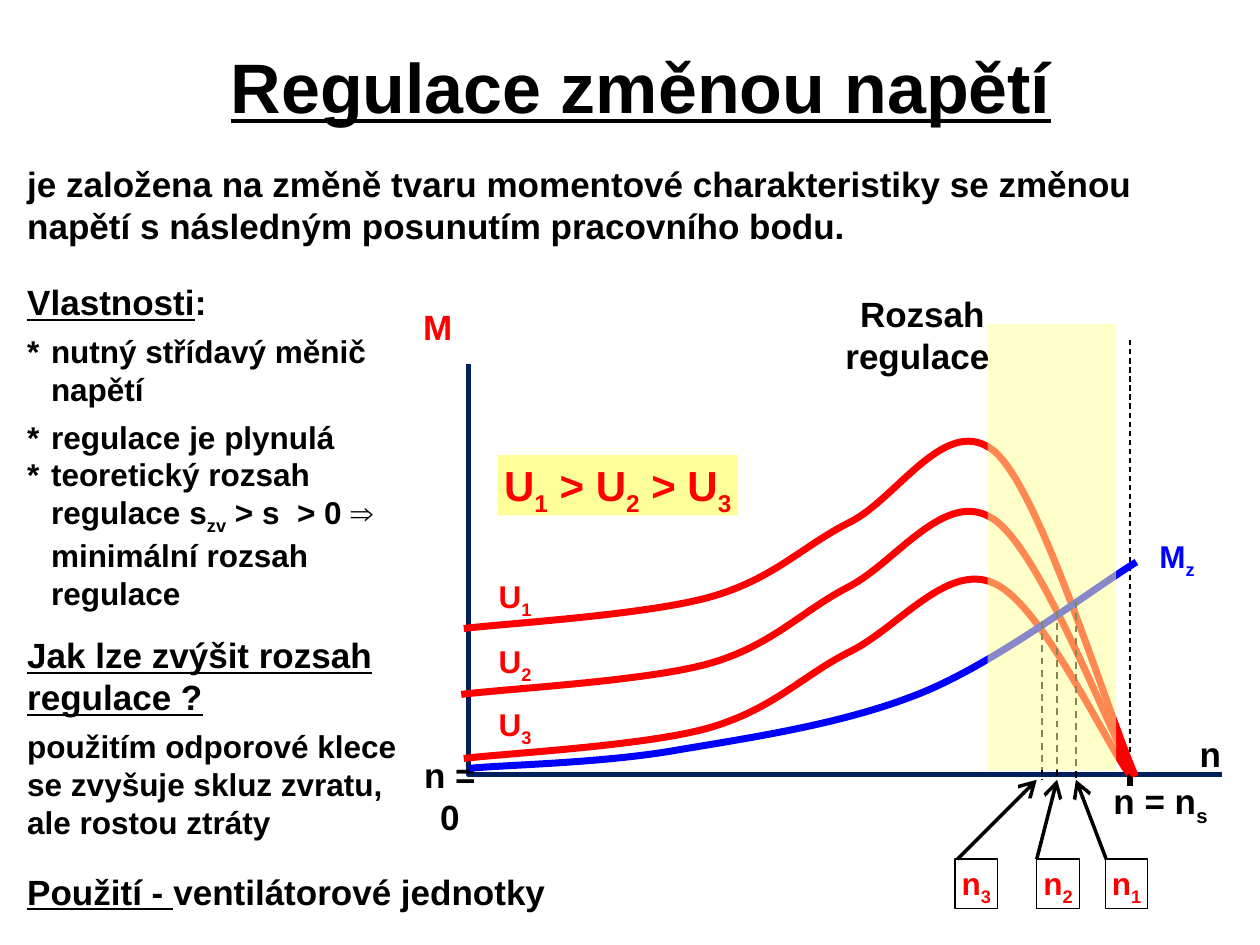
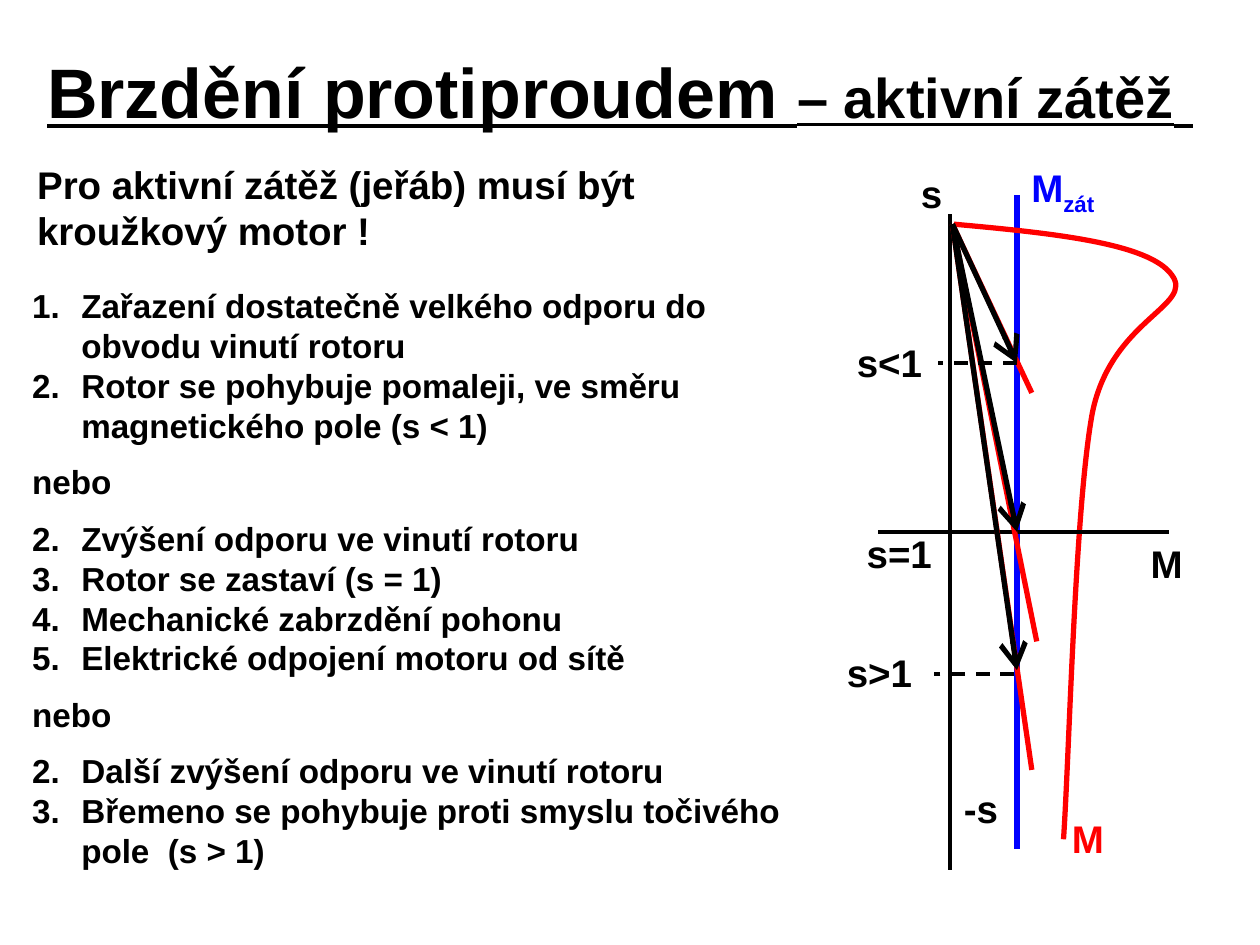
from lxml import etree
from pptx import Presentation
from pptx.dml.color import RGBColor
from pptx.enum.dml import MSO_LINE
from pptx.enum.shapes import MSO_CONNECTOR, MSO_SHAPE
from pptx.enum.text import MSO_ANCHOR, PP_ALIGN
from pptx.oxml.ns import qn
from pptx.util import Cm, Pt

BLACK = RGBColor(0, 0, 0)
WHITE = RGBColor(255, 255, 255)
RED = RGBColor(255, 0, 0)
BLUE = RGBColor(0, 0, 255)
NAVY = RGBColor(0, 0x20, 0x60)
YELLOW = RGBColor(255, 255, 0x99)

FONT = "Arial"
TITLE_SIZE = 40
LEFT, CENTER = PP_ALIGN.LEFT, PP_ALIGN.CENTER
TOP, MIDDLE, BOTTOM = MSO_ANCHOR.TOP, MSO_ANCHOR.MIDDLE, MSO_ANCHOR.BOTTOM
STRAIGHT = MSO_CONNECTOR.STRAIGHT
RECTANGLE = MSO_SHAPE.RECTANGLE
DASH = MSO_LINE.DASH


def add_run(p, text, size, color, underline=False, subscript=False):
    r = p.add_run()
    r.text = text
    font = r.font
    font.name, font.size, font.bold = FONT, Pt(size), True
    font.color.rgb = color
    if underline:
        font.underline = True
    if subscript:
        r._r.get_or_add_rPr().set("baseline", "-25000")


def add_runs(p, text, size, color):
    """Add text in which every second part between bars is a subscript."""
    for i, part in enumerate(text.split("|")):
        if part:
            add_run(p, part, size, color, subscript=i % 2 == 1)


def add_frame(slide, box, anchor=TOP, wrap=True, fill=None):
    sp = slide.shapes.add_textbox(*map(Cm, box))
    tf = sp.text_frame
    tf.word_wrap = wrap
    tf.vertical_anchor = anchor
    if fill is not None:
        sp.fill.solid()
        sp.fill.fore_color.rgb = fill
    return sp


def add_title(slide, box, *runs):
    p = add_frame(slide, box, MIDDLE).text_frame.paragraphs[0]
    p.alignment = CENTER
    for text, size in runs:
        add_run(p, text, size, BLACK, underline=True)


def add_label(slide, box, text, size, color=BLACK, anchor=MIDDLE, wrap=False, fill=None):
    """Add a centred label with narrow margins."""
    sp = add_frame(slide, box, anchor, wrap, fill)
    tf = sp.text_frame
    tf.margin_left = tf.margin_right = tf.margin_top = tf.margin_bottom = Cm(0.1)
    p = tf.paragraphs[0]
    p.alignment = CENTER
    add_runs(p, text, size, color)
    return sp


def add_block(slide, box, paragraphs, indent=0, fill=None, align=LEFT):
    """Add paragraphs given as (underlined lead, text, size, space before in percent)."""
    tf = add_frame(slide, box, fill=fill).text_frame
    for i, (lead, text, size, space) in enumerate(paragraphs):
        p = tf.paragraphs[0] if i == 0 else tf.add_paragraph()
        p.alignment = align
        p.space_before = Pt(size * space / 100)
        if indent:
            pPr = p._p.get_or_add_pPr()
            pPr.set("marL", str(Cm(indent)))
            pPr.set("indent", str(-Cm(indent)))
        if lead:
            add_run(p, lead, size, BLACK, underline=True)
        add_runs(p, text, size, BLACK)


def add_line(slide, start, end, color=BLACK, width=2.0, dashed=False, arrow=False):
    cn = slide.shapes.add_connector(STRAIGHT, *map(Cm, start + end))
    etree.SubElement(cn._element.spPr, qn("a:effectLst"))
    cn.line.color.rgb = color
    cn.line.width = Pt(width)
    if dashed:
        cn.line.dash_style = DASH
    if arrow:
        etree.SubElement(cn.line._get_or_add_ln(), qn("a:tailEnd"),
                         type="arrow", w="lg", len="lg")


def add_polyline(slide, points, color, width):
    points = [(Cm(x), Cm(y)) for x, y in points]
    builder = slide.shapes.build_freeform(*points[0])
    builder.add_line_segments(points[1:], close=False)
    sp = builder.convert_to_shape()
    sp.shadow.inherit = False
    sp.fill.background()
    sp.line.color.rgb = color
    sp.line.width = Pt(width)
    return sp


def add_curve(slide, knots, color, width):
    """Draw cubic segments; knots are a start, then two handles and an end for each."""
    sp = add_polyline(slide, knots, color, width)
    lines = list(sp._element.iter(qn("a:lnTo")))
    outline = lines[0].getparent()
    for i in range(0, len(lines), 3):
        cubic = etree.SubElement(outline, qn("a:cubicBezTo"))
        for line in lines[i:i + 3]:
            cubic.append(line[0])
            outline.remove(line)


def add_regulation_band(slide, box):
    sp = slide.shapes.add_shape(RECTANGLE, *map(Cm, box))
    sp.shadow.inherit = False
    sp.line.fill.background()
    sp.fill.solid()
    sp.fill.fore_color.rgb = YELLOW
    color = sp._element.spPr.find(qn("a:solidFill"))[0]
    etree.SubElement(color, qn("a:alpha"), val="53000")


def draw_voltage_chart(slide):
    axis_x, axis_y, sync_x = 9.45, 15.62, 22.78
    add_polyline(slide, [(axis_x, 7.34), (axis_x, axis_y), (24.64, axis_y)], NAVY, 3)
    add_line(slide, (sync_x, 15.39), (sync_x, 15.85), width=3)
    add_label(slide, (24.08, 14.66, 0.64, 1.04), "n", 20)
    add_label(slide, (22.33, 15.67, 2.13, 1.07), "n = n|s|", 20)
    add_label(slide, (8.27, 15.52, 1.6, 1.04), "n = 0", 20, wrap=True)
    add_line(slide, (sync_x, 6.86), (sync_x, axis_y), width=0.75, dashed=True)
    add_label(slide, (8.43, 6.07, 0.79, 1.04), "M", 20, RED)

    torque_curves = [
        [(9.35, 12.67), (10.19, 12.57), (13, 12.4), (14.3, 12.04),
         (15.6, 11.68), (16.18, 11), (17.15, 10.52),
         (18.11, 10.03), (19.1, 8.28), (20.07, 9.12),
         (21.01, 9.98), (22.3, 14.3), (22.89, 15.65)],
        [(9.3, 14), (10.13, 13.89), (12.95, 13.74), (14.25, 13.39),
         (15.55, 13.03), (16.13, 12.34), (17.09, 11.84),
         (18.06, 11.35), (19.05, 9.83), (20.02, 10.46),
         (20.96, 11.07), (22.28, 14.55), (22.86, 15.62)],
        [(9.35, 15.29), (10.16, 15.19), (12.98, 15.04), (14.27, 14.68),
         (15.6, 14.3), (16.18, 13.61), (17.15, 13.13),
         (18.11, 12.65), (19.1, 11.33), (20.04, 11.76),
         (20.98, 12.17), (22.2, 14.81), (22.76, 15.6)],
    ]
    for knots in torque_curves:
        add_curve(slide, knots, RED, 4)
    load_curve = [(9.47, 15.49), (10.13, 15.42), (12.04, 15.39), (13.54, 15.14),
                  (15.06, 14.88), (16.99, 14.61), (18.57, 13.97),
                  (20.12, 13.34), (22, 11.89), (22.91, 11.33)]
    add_curve(slide, load_curve, BLUE, 4)

    for i, y in enumerate((11.53, 12.85, 14.12), start=1):
        add_label(slide, (9.94, y, 0.89, 0.97), f"U|{i}|", 18, RED, TOP)
    add_label(slide, (10.03, 9.17, 4.85, 1.22), "U|1| > U|2| > U|3|", 24, RED, TOP, fill=YELLOW)
    add_label(slide, (23.26, 10.72, 0.94, 0.97), "M|z|", 18, BLUE, TOP)

    # index, working speed, top of its dashed line, box left, arrow start and tip
    speeds = [(1, 21.69, 12.12, 22.28, 22.3, 21.69),
              (2, 21.31, 12.32, 20.9, 20.9, 21.31),
              (3, 21.01, 12.52, 19.25, 19.3, 20.9)]
    for i, x, top, box_left, start, tip in speeds:
        add_line(slide, (x, top), (x, 15.72), width=1, dashed=True)
        sp = add_label(slide, (box_left, 17.32, 0.86, 0.99), f"n|{i}|", 18, RED, TOP)
        sp.line.color.rgb = BLACK
        sp.line.width = Pt(0.75)
        add_line(slide, (start, 17.32), (tip, 15.72), arrow=True)


def build_voltage_slide(slide):
    add_title(slide, (1.27, 0.69, 23.29, 2.06), ("Regulace změnou napětí", TITLE_SIZE))
    add_block(slide, (0.3, 3.15, 24.61, 1.96), [
        ("", "je založena na změně tvaru momentové charakteristiky se změnou "
             "napětí s následným posunutím pracovního bodu.", 20, 0)], fill=WHITE)
    draw_voltage_chart(slide)
    add_block(slide, (0.3, 5.54, 7.8, 6.91), [
        ("Vlastnosti", ":", 20, 0),
        ("", "*\tnutný střídavý měnič napětí", 18, 30),
        ("", "*\tregulace je plynulá", 18, 30),
        ("", "*\tteoretický rozsah regulace s|zv| > s  > 0 ⇒ minimální rozsah regulace", 18, 0),
    ], indent=0.48, fill=WHITE)
    add_block(slide, (0.3, 12.65, 8, 4.47), [
        ("Jak lze zvýšit rozsah regulace ?", "", 20, 0),
        ("", "použitím odporové klece se zvyšuje skluz zvratu, ale rostou ztráty", 18, 30),
    ], fill=WHITE)
    add_block(slide, (0.3, 17.42, 11.81, 1.09),
              [("Použití - ", "ventilátorové jednotky", 20, 0)], fill=WHITE)
    add_regulation_band(slide, (19.91, 6.53, 2.59, 8.99))
    add_block(slide, (16.69, 5.77, 3.81, 1.96), [("", "Rozsah regulace ", 20, 0)], align=CENTER)


def draw_braking_chart(slide):
    load_x, origin = 20.5, (19.2, 4.52)
    add_line(slide, (load_x, 3.94), (load_x, 17.12), BLUE, 3)
    add_curve(slide, [(19.23, 4.52), (21.21, 4.7), (23.16, 4.9), (23.62, 5.54),
                      (24.1, 6.17), (22.4, 6.43), (22.02, 8.33),
                      (21.67, 10.24), (21.56, 15.14), (21.44, 16.92)], RED, 3)
    add_line(slide, (17.7, 10.72), (23.57, 10.72))
    add_line(slide, (19.15, 4.32), (19.15, 17.53))
    for end in ((20.9, 12.93), (20.8, 7.92), (20.8, 15.52)):
        add_line(slide, origin, end, RED, 3)
    for end in ((load_x, 10.72), (load_x, 7.32), (load_x, 13.51)):
        add_line(slide, origin, end, width=3, arrow=True)
    add_line(slide, (load_x, 7.32), (18.9, 7.32), dashed=True)
    add_line(slide, (20.45, 13.59), (18.82, 13.59), dashed=True)

    labels = [("M|zát|", 20.64, 3.33, 1.57, BLUE), ("M", 23.09, 10.78, 0.86, BLACK),
              ("s", 18.46, 3.32, 0.64, BLACK), ("-s", 19.33, 15.72, 0.89, BLACK),
              ("M", 21.5, 16.33, 0.86, RED), ("s<1", 17.17, 6.73, 1.52, BLACK),
              ("s=1", 17.37, 10.58, 1.52, BLACK), ("s>1", 16.97, 12.98, 1.52, BLACK)]
    for text, x, y, width, color in labels:
        add_label(slide, (x, y, width, 1.14), text, 22, color, BOTTOM)


def build_braking_slide(slide):
    add_title(slide, (0.51, 0.53, 24, 2.59), ("Brzdění protiproudem ", TITLE_SIZE),
              ("– aktivní zátěž", 32), (" ", TITLE_SIZE))
    add_block(slide, (0.5, 3.12, 13, 2.11),
              [("", "Pro aktivní zátěž (jeřáb) musí být kroužkový motor !", 22, 0)])
    steps = [
        ("1.\tZařazení dostatečně velkého odporu do obvodu vinutí rotoru", 0),
        ("2.\tRotor se pohybuje pomaleji, ve směru magnetického pole (s < 1)", 0),
        ("nebo", 50),
        ("2.\tZvýšení odporu ve vinutí rotoru", 50),
        ("3.\tRotor se zastaví (s = 1)", 0),
        ("4.\tMechanické zabrzdění pohonu", 0),
        ("5.\tElektrické odpojení motoru od sítě", 0),
        ("nebo", 50),
        ("2.\tDalší zvýšení odporu ve vinutí rotoru", 50),
        ("3.\tBřemeno se pohybuje proti smyslu točivého pole  (s > 1)", 0),
    ]
    add_block(slide, (0.4, 5.63, 15.9, 12.29),
              [("", text, 19, space) for text, space in steps], indent=0.99)
    draw_braking_chart(slide)


def main():
    prs = Presentation()
    prs.slide_width, prs.slide_height = Cm(25.4), Cm(19.05)
    for build in (build_voltage_slide, build_braking_slide):
        build(prs.slides.add_slide(prs.slide_layouts[6]))
    prs.save("out.pptx")


if __name__ == "__main__":
    main()
